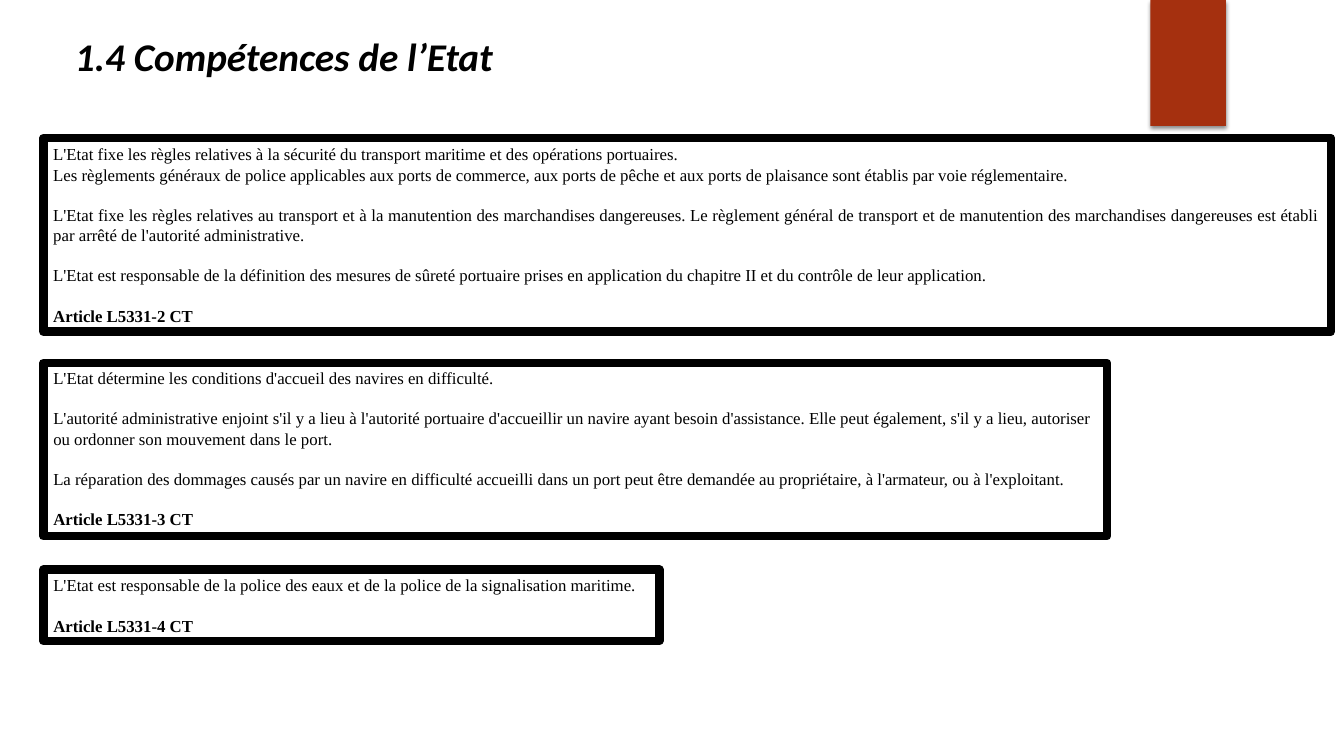
from pptx import Presentation
from pptx.dml.color import RGBColor
from pptx.enum.shapes import MSO_SHAPE
from pptx.enum.text import MSO_ANCHOR, PP_ALIGN
from pptx.util import Inches, Pt
from lxml import etree

RECT = MSO_SHAPE.RECTANGLE
TOP, MIDDLE = MSO_ANCHOR.TOP, MSO_ANCHOR.MIDDLE
LEFT, CENTER, JUSTIFY = PP_ALIGN.LEFT, PP_ALIGN.CENTER, PP_ALIGN.JUSTIFY
COLORS = {"accent": "A5300F", "ink": "000000"}
NS = "http://schemas.openxmlformats.org/drawingml/2006/main"


def rgb(name):
    return RGBColor.from_string(COLORS[name])


def write(p, text, size=12, font="Times New Roman", bold=False, italic=False,
          align=LEFT, before=0):
    p.alignment = align
    if before:
        p.space_before = Pt(before)
    r = p.add_run()
    r.text = text
    r.font.size = Pt(size)
    r.font.name = font
    r.font.bold = bold
    r.font.italic = italic
    r.font.color.rgb = rgb("ink")


prs = Presentation()
prs.slide_width, prs.slide_height = Inches(13.33), Inches(7.5)
s = prs.slides.add_slide(prs.slide_layouts[6])

# Red tab with a soft shadow below it
sp = s.shapes.add_shape(RECT, Inches(11.41), 0, Inches(0.75), Inches(1.25))
sp.shadow.inherit = False
sp.fill.solid()
sp.fill.fore_color.rgb = rgb("accent")
sp.line.fill.background()
effects = sp._element.spPr.find(f"{{{NS}}}effectLst")
effects.append(etree.fromstring(
    f'<a:outerShdw xmlns:a="{NS}" blurRad="{Pt(3)}" dist="{Pt(2)}" dir="5400000" '
    f'rotWithShape="0"><a:srgbClr val="{COLORS["ink"]}"><a:alpha val="45000"/>'
    '</a:srgbClr></a:outerShdw>'))

# Title
sp = s.shapes.add_textbox(Inches(0.1), Inches(0.27), Inches(5.43), Inches(0.57))
tf = sp.text_frame
tf.word_wrap = True
write(tf.paragraphs[0], "1.4 Compétences de l’Etat", size=28, font="Calibri",
      bold=True, italic=True, align=CENTER)

# Framed articles: top, width, height, anchor, alignment, groups of paragraphs
ARTICLES = [
    (1.37, 12.77, 1.92, MIDDLE, JUSTIFY, [
        ["L'Etat fixe les règles relatives à la sécurité du transport maritime et des "
         "opérations portuaires.",
         "Les règlements généraux de police applicables aux ports de commerce, aux ports "
         "de pêche et aux ports de plaisance sont établis par voie réglementaire."],
        ["L'Etat fixe les règles relatives au transport et à la manutention des "
         "marchandises dangereuses. Le règlement général de transport et de manutention "
         "des marchandises dangereuses est établi par arrêté de l'autorité administrative."],
        ["L'Etat est responsable de la définition des mesures de sûreté portuaire prises "
         "en application du chapitre II et du contrôle de leur application."],
        ["Article L5331-2 CT"]]),
    (3.6, 10.55, 1.72, TOP, LEFT, [
        ["L'Etat détermine les conditions d'accueil des navires en difficulté."],
        ["L'autorité administrative enjoint s'il y a lieu à l'autorité portuaire "
         "d'accueillir un navire ayant besoin d'assistance. Elle peut également, s'il y a "
         "lieu, autoriser ou ordonner son mouvement dans le port."],
        ["La réparation des dommages causés par un navire en difficulté accueilli dans un "
         "port peut être demandée au propriétaire, à l'armateur, ou à l'exploitant."],
        ["Article L5331-3 CT"]]),
    (5.65, 6.11, 0.71, MIDDLE, JUSTIFY, [
        ["L'Etat est responsable de la police des eaux et de la police de la signalisation "
         "maritime."],
        ["Article L5331-4 CT"]]),
]
GROUP_GAP = 14.4

for top, width, height, anchor, align, groups in ARTICLES:
    sp = s.shapes.add_shape(RECT, Inches(0.43), Inches(top), Inches(width), Inches(height))
    sp.shadow.inherit = False
    sp.fill.background()
    sp.line.color.rgb = rgb("ink")
    sp.line.width = Pt(6)
    etree.SubElement(sp._element.spPr.find(f"{{{NS}}}ln"), f"{{{NS}}}round")
    tf = sp.text_frame
    tf.word_wrap = True
    tf.vertical_anchor = anchor
    for g, group in enumerate(groups):
        for i, text in enumerate(group):
            p = tf.paragraphs[0] if g == i == 0 else tf.add_paragraph()
            write(p, text, align=align, bold=text.startswith("Article"),
                  before=GROUP_GAP if g and i == 0 else 0)

prs.save("out.pptx")
